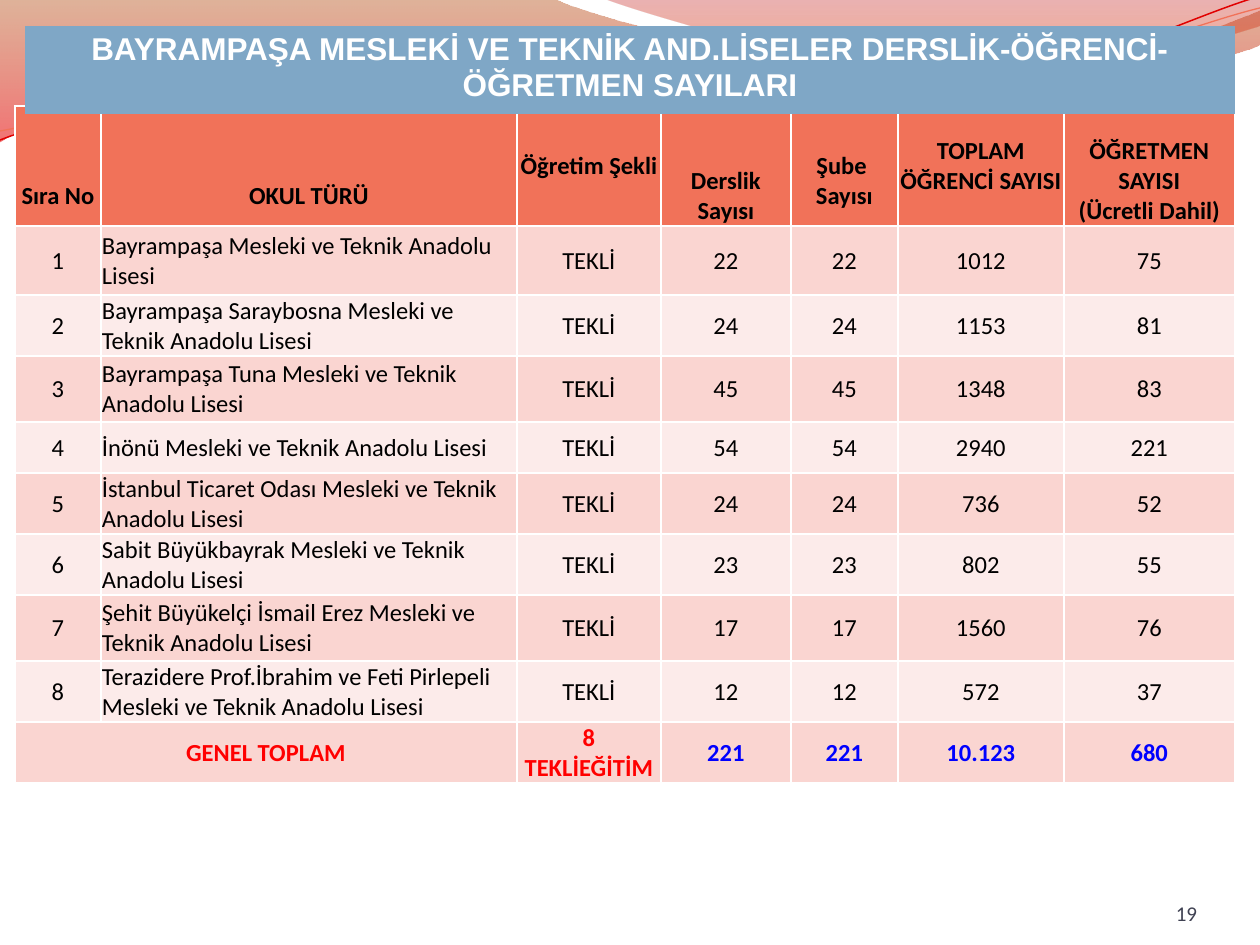
from dataclasses import dataclass

from lxml.etree import SubElement
from pptx import Presentation
from pptx.dml.color import RGBColor
from pptx.enum.text import MSO_ANCHOR as Anchor, PP_ALIGN as Align
from pptx.oxml.ns import qn
from pptx.util import Pt

EMU_PER_PX = 914400 / 126


@dataclass(frozen=True)
class Theme:
    """Colours, fonts and type sizes of the slide."""
    white: str = "FFFFFF"
    ink: str = "000000"
    title_fill: str = "7FA7C6"
    header: str = "F17259"
    bands: tuple = ("FAD5D1", "FCEBEA")
    total_label: str = "FF0000"
    total_value: str = "0000FF"
    page_ink: str = "3F4152"
    red_line: str = "E10000"
    warm_wave: tuple = ((0, "B9561F", 45), (1, "E70000", 55))
    rose_wave: tuple = ((0, "BD0000", 30), (0.8, "EC6215", 45))
    title_font: str = "Arial"
    body_font: str = "Calibri"
    title_size: int = 18
    body_size: int = 14
    page_size: int = 12


THEME = Theme()
TITLE = "BAYRAMPAŞA MESLEKİ VE TEKNİK AND.LİSELER DERSLİK-ÖĞRENCİ-ÖĞRETMEN SAYILARI"
COLUMN_WIDTHS = (86, 416, 144, 130, 107, 166, 171)
ROW_HEIGHTS = (120, 69, 61, 66, 51, 61, 61, 66, 61, 61)
HEADINGS = (
    ("Sıra No", 2), ("OKUL TÜRÜ", 2), ("Öğretim Şekli", 0), ("Derslik Sayısı", 2),
    ("Şube \nSayısı", 1), ("TOPLAM ÖĞRENCİ SAYISI", 0),
    ("ÖĞRETMEN SAYISI\n(Ücretli Dahil)", 1),
)
HEADING_LINE = 30
SCHOOLS = (
    ("Bayrampaşa Mesleki ve Teknik Anadolu Lisesi", 22, 22, 1012, 75),
    ("Bayrampaşa Saraybosna Mesleki ve Teknik Anadolu Lisesi", 24, 24, 1153, 81),
    ("Bayrampaşa Tuna Mesleki ve Teknik Anadolu Lisesi", 45, 45, 1348, 83),
    ("İnönü Mesleki ve Teknik Anadolu Lisesi", 54, 54, 2940, 221),
    ("İstanbul Ticaret Odası Mesleki ve Teknik Anadolu Lisesi", 24, 24, 736, 52),
    ("Sabit Büyükbayrak Mesleki ve Teknik Anadolu Lisesi", 23, 23, 802, 55),
    ("Şehit Büyükelçi İsmail Erez Mesleki ve Teknik Anadolu Lisesi", 17, 17, 1560, 76),
    ("Terazidere Prof.İbrahim ve Feti Pirlepeli Mesleki ve Teknik Anadolu Lisesi",
     12, 12, 572, 37),
)
TOTALS = ("GENEL TOPLAM", "", "8 TEKLİEĞİTİM", 221, 221, "10.123", 680)

WARM_WAVE = (
    (0, -1), (554, -1), (600, 21, 837, 79, 955, 79), (1075, 79, 1207, 33, 1260, 11),
    (1261, 45), (1239, 55, 1096, 96, 940, 95), (784, 95, 481, 35, 324, 43),
    (163, 44, 58, 105, -1, 142), (0, -1),
)
ROSE_WAVE = (
    (604, -1), (641, 14, 859, 78, 969, 82), (1079, 87, 1211, 40, 1260, 26),
    (1260, 0), (604, -1),
)
RED_CURVE = (
    (0, 140), (60, 117, 199, 72, 349, 66), (498, 59, 747, 112, 898, 101),
    (1049, 89, 1182, 19, 1257, -3),
)
CORAL_CURVE = (
    (0, 131), (59, 121, 207, 77, 357, 71), (508, 64, 752, 105, 903, 94),
    (1053, 84, 1185, 26, 1260, 8),
)


def px(length):
    """Turn px into EMU."""
    return round(length * EMU_PER_PX)


def rgb(code):
    """Turn a hex code into a colour."""
    return RGBColor.from_string(code)


def add_outline(slide, steps, close):
    """Draw a freeform whose six-number steps are cubic curves."""
    start, *rest = [(px(step[i]), px(step[i + 1]))
                    for step in steps for i in range(0, len(step), 2)]
    builder = slide.shapes.build_freeform(*start)
    builder.add_line_segments(rest, close=close)
    outline = builder.convert_to_shape()
    outline.shadow.inherit = False
    segments = iter(outline._element.xpath(".//a:lnTo"))
    for step in steps[1:]:
        segment = next(segments)
        if len(step) == 6:
            segment.tag = qn("a:cubicBezTo")
            for _ in range(2):
                extra = next(segments)
                segment.append(extra[0])
                extra.getparent().remove(extra)
    return outline


def add_wave(slide, steps, stops):
    """Draw a closed wave with a translucent vertical gradient."""
    wave = add_outline(slide, steps, True)
    wave.line.fill.background()
    wave.fill.gradient()
    wave.fill.gradient_angle = 270
    for stop, (position, color, _) in zip(wave.fill.gradient_stops, stops):
        stop.position = position
        stop.color.rgb = rgb(color)
    for tint, (_, _, opacity) in zip(wave._element.xpath(".//a:gs/a:srgbClr"), stops):
        SubElement(tint, qn("a:alpha"), val=str(opacity * 1000))


def add_curve(slide, steps, color, weight):
    """Draw an open curve."""
    curve = add_outline(slide, steps, False)
    curve.fill.background()
    curve.line.color.rgb = rgb(color)
    curve.line.width = Pt(weight)


def add_backdrop(slide):
    """Draw the waves and curves along the top edge."""
    add_wave(slide, WARM_WAVE, THEME.warm_wave)
    add_wave(slide, ROSE_WAVE, THEME.rose_wave)
    add_curve(slide, RED_CURVE, THEME.red_line, 0.85)
    add_curve(slide, CORAL_CURVE, THEME.header, 0.75)


def style_text(frame, size, color, font=THEME.body_font, bold=False, align=Align.CENTER):
    """Set font and alignment on each paragraph."""
    for paragraph in frame.paragraphs:
        paragraph.alignment = align
        paragraph.font.name, paragraph.font.size = font, Pt(size)
        paragraph.font.bold = bold
        paragraph.font.color.rgb = rgb(color)


def paint_cell(cell, fill):
    """Set the fill of a cell."""
    cell.fill.solid()
    cell.fill.fore_color.rgb = rgb(fill)


def fill_cell(cell, text, fill, color=THEME.ink, bold=False, align=Align.CENTER, top=1):
    """Write and style one cell of the school table."""
    cell.text = str(text)
    cell.vertical_anchor = Anchor.MIDDLE
    cell.margin_left = cell.margin_right = px(1)
    cell.margin_top, cell.margin_bottom = px(top), 0
    style_text(cell.text_frame, THEME.body_size, color, bold=bold, align=align)
    paint_cell(cell, fill)


def add_school_table(slide, left, top):
    """Place the table of schools with its header and totals."""
    table = slide.shapes.add_table(
        len(ROW_HEIGHTS), len(COLUMN_WIDTHS), px(left), px(top),
        px(sum(COLUMN_WIDTHS)), px(sum(ROW_HEIGHTS))).table
    for column, width in zip(table.columns, COLUMN_WIDTHS):
        column.width = px(width)
    for row, height in zip(table.rows, ROW_HEIGHTS):
        row.height = px(height)
    for c, (heading, lines_above) in enumerate(HEADINGS):
        fill_cell(table.cell(0, c), heading, THEME.header, bold=True,
                  top=lines_above * HEADING_LINE)
    for r, (school, *counts) in enumerate(SCHOOLS, 1):
        for c, value in enumerate((r, school, "TEKLİ", *counts)):
            fill_cell(table.cell(r, c), value, THEME.bands[(r - 1) % 2],
                      align=Align.LEFT if c == 1 else Align.CENTER)
    last = len(ROW_HEIGHTS) - 1
    for c, value in enumerate(TOTALS):
        color = THEME.total_label if c < 3 else THEME.total_value
        fill_cell(table.cell(last, c), value, THEME.bands[0], color, bold=True)
    table.cell(last, 0).merge(table.cell(last, 1))


def add_title(slide, left, top, width, height):
    """Place the title band as a one-cell table without borders."""
    cell = slide.shapes.add_table(
        1, 1, px(left), px(top), px(width), px(height)).table.cell(0, 0)
    cell.text = TITLE
    style_text(cell.text_frame, THEME.title_size, THEME.white, THEME.title_font, True)
    properties = cell._tc.get_or_add_tcPr()
    for side in "LRTB":
        SubElement(SubElement(properties, qn(f"a:ln{side}"), w="0"), qn("a:noFill"))
    paint_cell(cell, THEME.title_fill)


def add_page_number(slide, left, top, width, height):
    """Place the page number at the bottom right."""
    frame = slide.shapes.add_textbox(px(left), px(top), px(width), px(height)).text_frame
    frame.text = "19"
    frame.word_wrap = True
    frame.vertical_anchor = Anchor.BOTTOM
    frame.margin_left = frame.margin_right = frame.margin_top = frame.margin_bottom = 0
    style_text(frame, THEME.page_size, THEME.page_ink, align=Align.RIGHT)


def main():
    """Build and save the slide."""
    deck = Presentation()
    deck.slide_width, deck.slide_height = px(1260), px(945)
    slide = deck.slides.add_slide(deck.slide_layouts[6])
    add_backdrop(slide)
    add_page_number(slide, 1092, 876, 105, 50)
    add_school_table(slide, 15, 106)
    add_title(slide, 25, 26, 1210, 66)
    deck.save("out.pptx")


if __name__ == "__main__":
    main()
